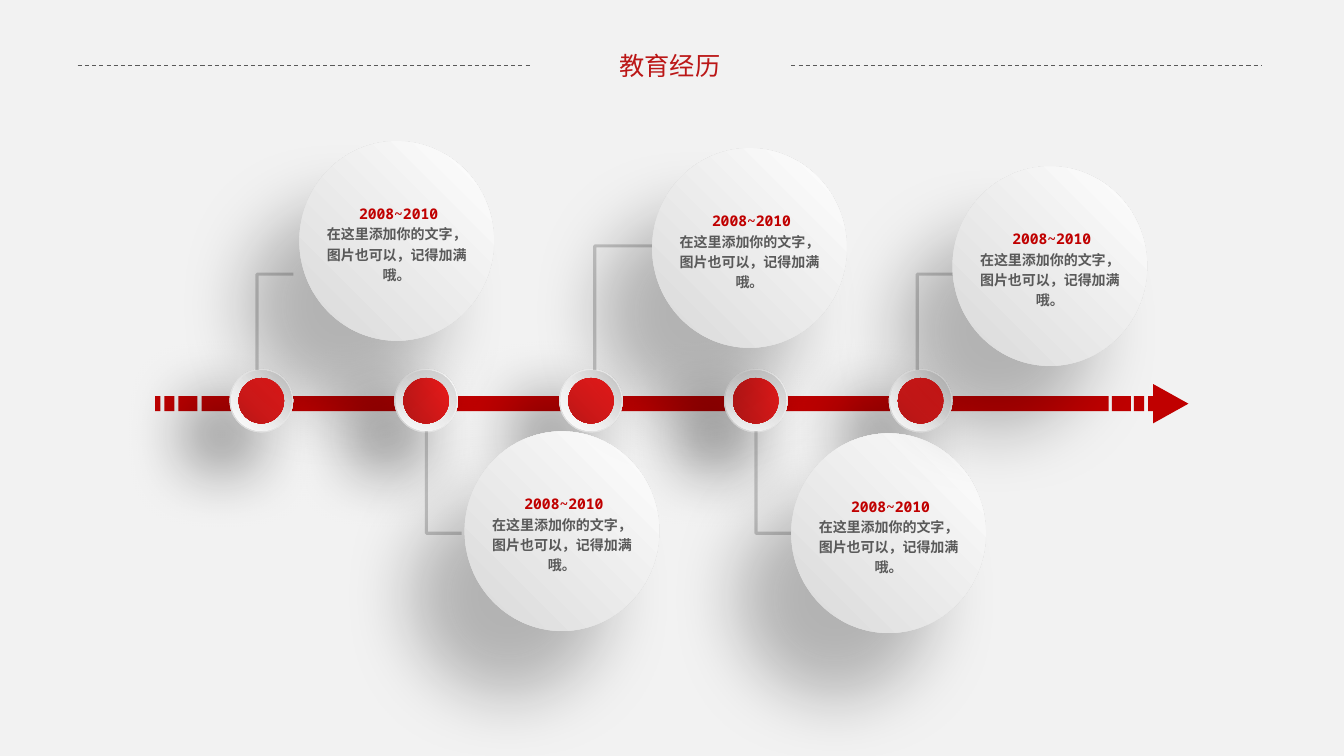
import dataclasses
import typing

import pptx
import pptx.dml.color
import pptx.enum.dml
import pptx.enum.shapes
import pptx.enum.text
import pptx.oxml
import pptx.oxml.ns
import pptx.util

SHAPES = pptx.enum.shapes.MSO_SHAPE
CONNECTORS = pptx.enum.shapes.MSO_CONNECTOR
SLIDE_WIDTH, SLIDE_HEIGHT = pptx.util.Inches(13.33), pptx.util.Inches(7.5)
COLUMNS, ROWS = 160, 90  # grid of square cells
PERIOD = "2008~2010"
BODY = "在这里添加你的文字，图片也可以，记得加满哦。"


@dataclasses.dataclass(frozen=True)
class Theme:
    background: str = "F2F2F2"
    axis: str = "C00000"
    title: str = "BB1717"
    grey: str = "595959"
    white_to_grey: tuple[str, str] = ("FFFFFF", "D9D9D9")
    grey_to_white: tuple[str, str] = ("D9D9D9", "FEFEFE")
    reds: tuple[str, str] = ("BB1717", "F11B1B")
    title_size: float = 18
    period_size: float = 10.5
    body_size: float = 10
    title_font: str = "Lato"
    period_font: str = "Noto Sans Mono"
    body_font: str = "Arial"


@dataclasses.dataclass(frozen=True)
class Box:
    left: float
    top: float
    width: float
    height: float

    def lengths(self) -> tuple[int, int, int, int]:
        return (column(self.left), row(self.top), column(self.width), row(self.height))


@dataclasses.dataclass(frozen=True)
class Shadow:
    opacity: int
    blur: int
    distance: int
    angle: int


@dataclasses.dataclass(frozen=True)
class Milestone:
    left: float  # balloon corner
    top: float
    stem: float  # column of the vertical part
    start: float  # row at the axis
    end_column: float
    end_row: float


THEME = Theme()
TOP_RIGHT, BOTTOM_LEFT = (100, 0, 0, 100), (0, 100, 100, 0)
NODE_SHADOW, BALLOON_SHADOW = Shadow(61, 50, 37, 140), Shadow(25, 50, 60, 130)
AXIS_BARS = [(18.48, 0.6), (19.56, 1.2), (21.24, 2.28), (24, 108),
             (132.36, 2.28), (135, 1.2), (136.68, 0.6)]
ARROWHEAD = Box(137.04, 45.96, 4.68, 4.2)
NODE_COUNT, FIRST_NODE, NODE_STEP, NODE_ROW = 5, 31.12, 19.62, 47.7
MILESTONES = [
    Milestone(35.64, 16.8, 30.6, 44.04, 34.92, 32.64),
    Milestone(55.32, 51.36, 50.76, 51.36, 54.96, 63.48),
    Milestone(77.64, 17.64, 70.8, 44.04, 77.88, 29.28),
    Milestone(94.2, 51.6, 90, 51.36, 94.2, 63.48),
    Milestone(113.4, 19.8, 109.2, 44.04, 113.4, 32.64),
]


def column(count: float) -> int:
    return round(SLIDE_WIDTH * count / COLUMNS)


def row(count: float) -> int:
    return round(SLIDE_HEIGHT * count / ROWS)


def rgb(color: str) -> pptx.dml.color.RGBColor:
    return pptx.dml.color.RGBColor.from_string(color)


def drawing(tag: str, attributes: str = "", content: str = "") -> typing.Any:
    namespace = pptx.oxml.ns.nsdecls("a")
    return pptx.oxml.parse_xml(f"<a:{tag} {namespace} {attributes}>{content}</a:{tag}>")


def add_plain(shapes: typing.Any, kind: typing.Any, box: Box) -> typing.Any:
    shape = shapes.add_shape(kind, *box.lengths())
    shape.shadow.inherit = False
    shape.fill.solid()
    shape.fill.fore_color.rgb = rgb(THEME.axis)
    shape.line.fill.background()
    return shape


def add_disc(shapes: typing.Any, box: Box, colors: tuple[str, str], *,
             focus: tuple[int, int, int, int] = TOP_RIGHT,
             shadow: Shadow | None = None, flipped: bool = False) -> None:
    shape = add_plain(shapes, SHAPES.OVAL, box)
    properties = shape._element.spPr
    stops = "".join(f'<a:gs pos="{position}"><a:srgbClr val="{color}"/></a:gs>'
                    for position, color in zip((0, 100000), colors))
    edges = " ".join(f'{side}="{share * 1000}"' for side, share in zip("ltrb", focus))
    gradient = drawing("gradFill", 'rotWithShape="1"',
                       f'<a:gsLst>{stops}</a:gsLst><a:path path="circle">'
                       f"<a:fillToRect {edges}/></a:path>")
    properties.replace(properties.find(pptx.oxml.ns.qn("a:solidFill")), gradient)
    if flipped:
        properties.xfrm.set("flipH", "1")
    if shadow:
        effects = properties.find(pptx.oxml.ns.qn("a:effectLst"))
        effects.append(drawing(
            "outerShdw",
            f'blurRad="{pptx.util.Pt(shadow.blur)}" dist="{pptx.util.Pt(shadow.distance)}" '
            f'dir="{shadow.angle * 60000}" rotWithShape="0"',
            f'<a:srgbClr val="000000"><a:alpha val="{shadow.opacity * 1000}"/></a:srgbClr>'))


def add_line(shapes: typing.Any, kind: typing.Any, begin: tuple[float, float],
             end: tuple[float, float], width: float) -> typing.Any:
    line = shapes.add_connector(kind, column(begin[0]), row(begin[1]),
                                column(end[0]), row(end[1]))
    line.line.color.rgb = rgb(THEME.grey)
    line.line.width = pptx.util.Pt(width)
    line._element.spPr.append(drawing("effectLst"))
    return line


def add_elbow(shapes: typing.Any, milestone: Milestone) -> None:
    rises = milestone.end_row < milestone.start
    center_x = (milestone.stem + milestone.end_column) / 2
    center_y = (milestone.start + milestone.end_row) / 2
    half_length = abs(milestone.end_row - milestone.start) / 2
    half_reach = (milestone.end_column - milestone.stem) / 2 * (1 if rises else -1)
    elbow = add_line(shapes, CONNECTORS.ELBOW,
                     (center_x + half_length, center_y + half_reach),
                     (center_x - half_length, center_y - half_reach), 2.25)
    properties = elbow._element.spPr
    properties.xfrm.set("rot", str((90 if rises else 270) * 60000))
    properties.find(pptx.oxml.ns.qn("a:prstGeom")).set("prst", "bentConnector2")
    color = next(properties.iter(pptx.oxml.ns.qn("a:srgbClr")))
    color.append(drawing("alpha", 'val="30000"'))


def add_text_frame(shapes: typing.Any, box: Box, wrap: bool) -> typing.Any:
    frame = shapes.add_textbox(*box.lengths()).text_frame
    frame.word_wrap = wrap
    frame.auto_size = pptx.enum.text.MSO_AUTO_SIZE.SHAPE_TO_FIT_TEXT
    return frame


def write(paragraph: typing.Any, text: str, *, size: float, font: str, color: str,
          bold: bool = False, spacing: float = 1.0) -> None:
    paragraph.alignment = pptx.enum.text.PP_ALIGN.CENTER
    paragraph.line_spacing = spacing
    run = paragraph.add_run()
    run.text = text
    run.font.size = pptx.util.Pt(size)
    run.font.name = font
    run.font.bold = bold
    run.font.color.rgb = rgb(color)


def add_node(shapes: typing.Any, center: float) -> None:
    discs = [(7.56, THEME.white_to_grey, TOP_RIGHT, NODE_SHADOW),
             (7.2, THEME.grey_to_white, TOP_RIGHT, None),
             (5.4, THEME.reds, BOTTOM_LEFT, None)]
    for size, colors, focus, shadow in discs:
        box = Box(center - size / 2, NODE_ROW - size / 2, size, size)
        add_disc(shapes, box, colors, focus=focus, shadow=shadow, flipped=True)


def add_balloon(shapes: typing.Any, left: float, top: float) -> None:
    add_disc(shapes, Box(left, top, 23.16, 23.76), THEME.white_to_grey, shadow=BALLOON_SHADOW)
    frame = add_text_frame(shapes, Box(left + 1.8, top + 6.6, 19.56, 11.04), True)
    heading, body = frame.paragraphs[0], frame.add_paragraph()
    for paragraph, text, size, font, color in [
            (heading, " ", THEME.period_size, THEME.body_font, THEME.grey),
            (heading, PERIOD, THEME.period_size, THEME.period_font, THEME.axis),
            (body, BODY, THEME.body_size, THEME.body_font, THEME.grey)]:
        write(paragraph, text, size=size, font=font, color=color, bold=True, spacing=1.2)


def main() -> None:
    presentation = pptx.Presentation()
    presentation.slide_width, presentation.slide_height = SLIDE_WIDTH, SLIDE_HEIGHT
    slide = presentation.slides.add_slide(presentation.slide_layouts[6])
    slide.background.fill.solid()
    slide.background.fill.fore_color.rgb = rgb(THEME.background)
    shapes = slide.shapes

    # Time axis
    axis = shapes.add_group_shape().shapes
    for left, width in AXIS_BARS:
        add_plain(axis, SHAPES.RECTANGLE, Box(left, 47.16, width, 1.8))
    add_plain(axis, SHAPES.ISOSCELES_TRIANGLE, ARROWHEAD).rotation = 90

    # Title between dashed rules
    title = add_text_frame(shapes, Box(72.48, 5.4, 14.52, 4.8), False)
    write(title.paragraphs[0], "教育经历", size=THEME.title_size,
          font=THEME.title_font, color=THEME.title)
    for begin, end in [(9.24, 63.12), (94.2, 150.24)]:
        rule = add_line(shapes, CONNECTORS.STRAIGHT, (begin, 7.8), (end, 7.8), 0.75)
        rule.line.dash_style = pptx.enum.dml.MSO_LINE.DASH

    # Nodes, elbows and balloons
    for index in range(NODE_COUNT):
        add_node(shapes.add_group_shape().shapes, FIRST_NODE + index * NODE_STEP)
    for milestone in MILESTONES:
        add_elbow(shapes, milestone)
    for milestone in MILESTONES:
        add_balloon(shapes.add_group_shape().shapes, milestone.left, milestone.top)

    presentation.save("out.pptx")


if __name__ == "__main__":
    main()
